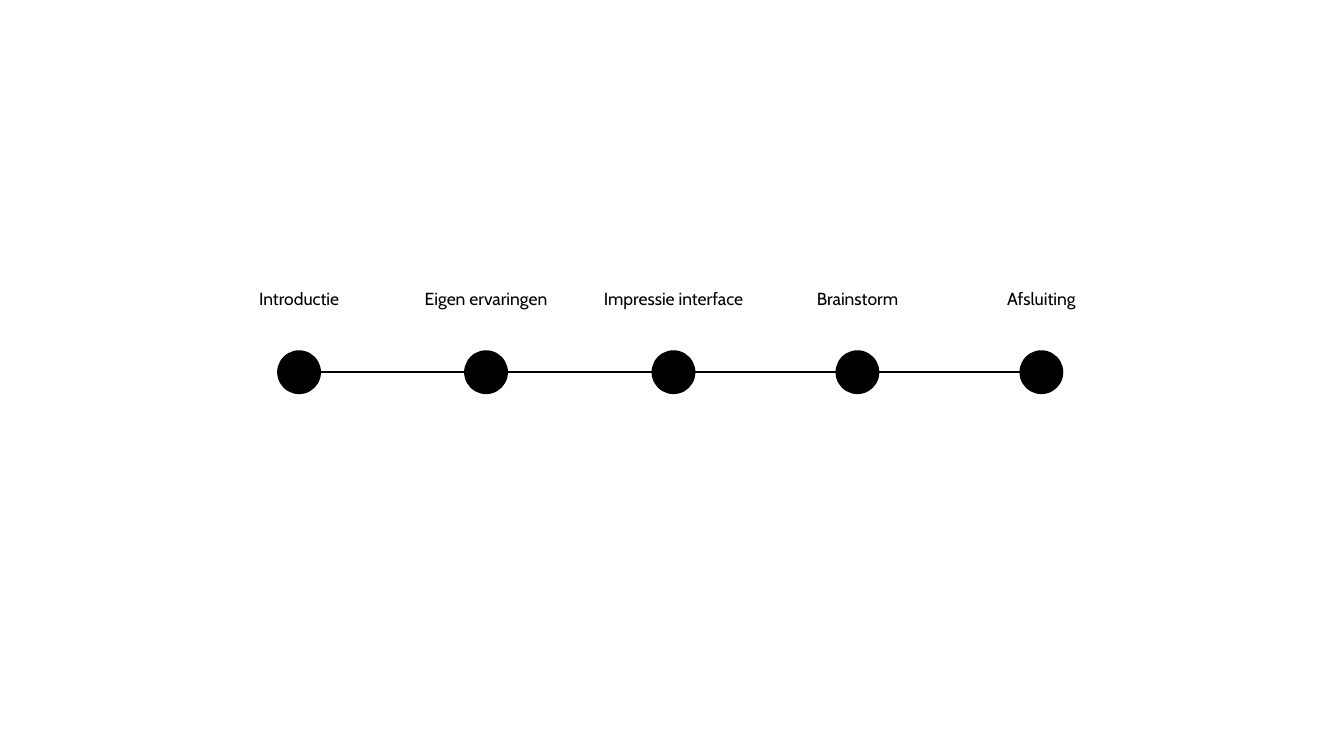
from pptx import Presentation
from pptx.dml.color import RGBColor
from pptx.enum.shapes import MSO_CONNECTOR, MSO_SHAPE
from pptx.enum.text import MSO_ANCHOR, PP_ALIGN
from pptx.oxml.ns import qn
from pptx.util import Inches, Pt
from lxml import etree

STRAIGHT = MSO_CONNECTOR.STRAIGHT
OVAL = MSO_SHAPE.OVAL
TOP = MSO_ANCHOR.TOP
CENTER = PP_ALIGN.CENTER

FONT = "Cabin"
BLACK = "000000"
DOT = 0.87
LABEL_W, LABEL_H = 3.11, 0.87

# Each step: label and the offset of its dot from the left of the timeline
STEPS = [
    ("Introductie", 0),
    ("Eigen ervaringen", 3.71),
    ("Impressie interface", 7.43),
    ("Brainstorm", 11.08),
    ("Afsluiting", 14.73),
]


def color(value):
    return RGBColor.from_string(value)


def add_label(s, text, left, top, width, height):
    tf = s.shapes.add_textbox(Inches(left), Inches(top), Inches(width), Inches(height)).text_frame
    tf.word_wrap = True
    tf.vertical_anchor = TOP
    tf.margin_left = tf.margin_right = tf.margin_top = tf.margin_bottom = Inches(0.06)
    tf.text = text
    p = tf.paragraphs[0]
    p.alignment = CENTER
    font = p.runs[0].font
    font.name, font.size = FONT, Pt(25)
    font.color.rgb = color(BLACK)


def add_dot(s, left, top):
    sp = s.shapes.add_shape(OVAL, Inches(left), Inches(top), Inches(DOT), Inches(DOT))
    sp.shadow.inherit = False
    sp.fill.solid()
    sp.fill.fore_color.rgb = color(BLACK)
    sp.line.fill.background()


def add_line(s, x1, x2, y):
    line = s.shapes.add_connector(STRAIGHT, Inches(x1), Inches(y), Inches(x2), Inches(y))
    line.line.color.rgb = color(BLACK)
    line.line.width = Pt(2)
    etree.SubElement(line._element.spPr, qn("a:effectLst"))


def add_timeline(s, left, top, width, height):
    """Labels along the top of the box, joined dots along its bottom."""
    dot_top = top + height - DOT
    for text, offset in STEPS:
        x = left + offset
        add_dot(s, x, dot_top)
        add_label(s, text, x + (DOT - LABEL_W) / 2, top, LABEL_W, LABEL_H)
    add_line(s, left + DOT / 2, left + width - DOT / 2, dot_top + DOT / 2)


def main():
    prs = Presentation()
    prs.slide_width, prs.slide_height = Inches(26.67), Inches(15)
    s = prs.slides.add_slide(prs.slide_layouts[6])
    add_timeline(s, 5.5, 5.65, 15.6, 2.17)
    prs.save("out.pptx")


if __name__ == "__main__":
    main()
